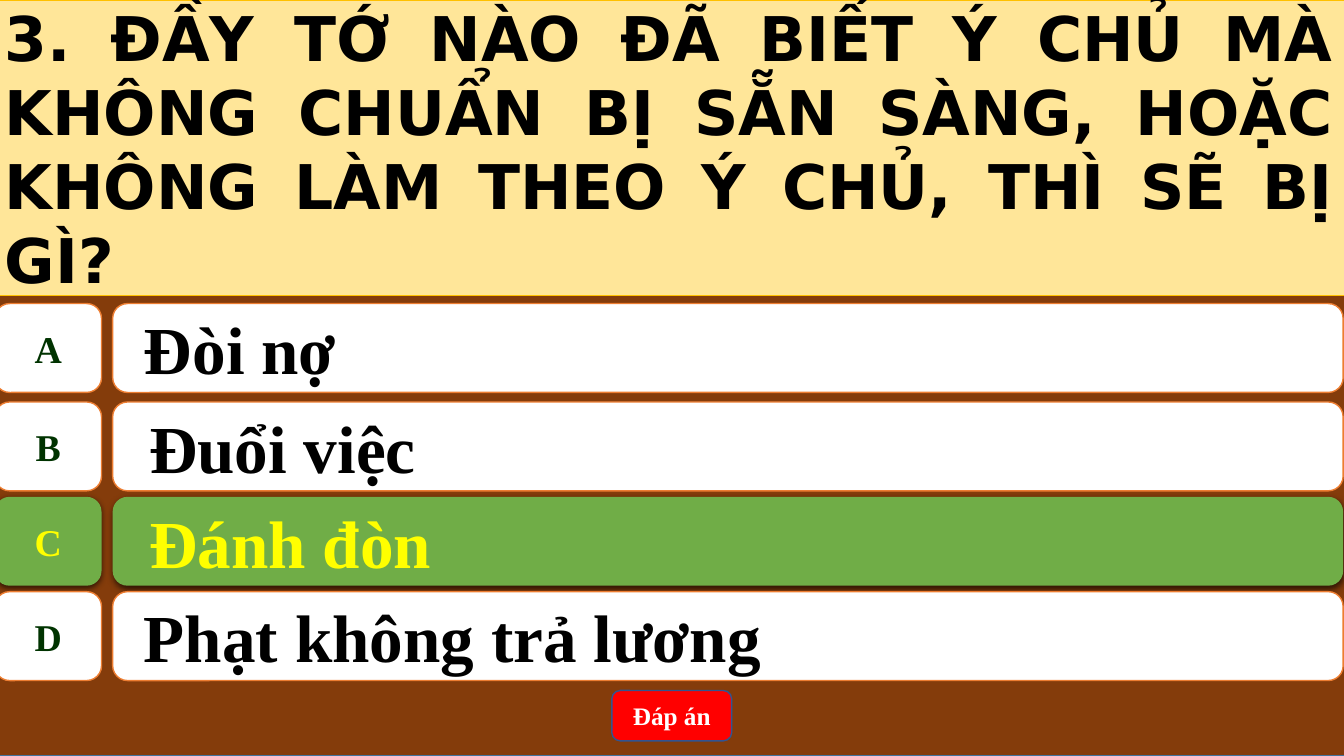
"""Build a quiz slide with one question, four answers and the right one marked."""
from dataclasses import dataclass

from lxml import etree
from pptx import Presentation
from pptx.dml.color import RGBColor
from pptx.enum import shapes, text
from pptx.oxml import ns
from pptx.util import Cm, Pt

QUESTION = ("3. ĐẦY TỚ NÀO ĐÃ BIẾT Ý CHỦ MÀ KHÔNG CHUẨN BỊ SẴN SÀNG, "
            "HOẶC KHÔNG LÀM THEO Ý CHỦ, THÌ SẼ BỊ GÌ?")
ANSWERS = [
    {"letter": "A", "answer": "Đòi nợ", "top": 7.65, "indent": 0.68},
    {"letter": "B", "answer": "Đuổi việc", "top": 10.13, "indent": 0.81},
    {"letter": "C", "answer": "Đánh đòn", "top": 12.52, "indent": 0.81},
    {"letter": "D", "answer": "Phạt không trả lương", "top": 14.91, "indent": 0.68},
]
RIGHT_LETTER = "C"
REVEAL = "Đáp án"


@dataclass(frozen=True)
class Theme:
    """Colours, fonts and type sizes of the slide."""
    board: str = "843C0B"
    board_edge: str = "43739E"
    question_fill: str = "FFE699"
    question_edge: str = "FFC000"
    row_fill: str = "FFFFFF"
    row_edge: str = "ED7D31"
    right_fill: str = "70AD47"
    right_ink: str = "FFFF00"
    letter_ink: str = "003300"
    ink: str = "000000"
    button: str = "FF0000"
    button_edge: str = "325491"
    button_ink: str = "FFFFFF"
    question_font: str = "DejaVu Sans"
    font: str = "Times New Roman"
    question_size: int = 44
    answer_size: int = 48
    letter_size: int = 27
    button_size: int = 18


THEME = Theme()
LEFT, FULL_WIDTH, SLIDE_HEIGHT, QUESTION_HEIGHT = -0.13, 34.01, 19.05, 7.44
ROW_HEIGHT, LETTER_WIDTH, ANSWER_LEFT, ANSWER_WIDTH = 2.24, 2.69, 2.84, 31.01
BUTTON_BOX = (15.42, 17.4, 3.02, 1.27)


def paint(panel, fill, edge=None, width=1):
    """Set the fill and the outline."""
    panel.fill.solid()
    panel.fill.fore_color.rgb = RGBColor.from_string(fill)
    if edge:
        panel.line.color.rgb = RGBColor.from_string(edge)
        panel.line.width = Pt(width)
    else:
        panel.line.fill.background()


def write(panel, words, *, size, color, font=THEME.font,
          align=text.PP_ALIGN.CENTER, wrap=True, indent=0.25):
    """Put one formatted bold paragraph into a panel."""
    frame = panel.text_frame
    frame.auto_size = text.MSO_AUTO_SIZE.NONE
    frame.word_wrap = wrap
    frame.vertical_anchor = text.MSO_ANCHOR.MIDDLE
    frame.margin_left = Cm(indent)
    paragraph = frame.paragraphs[0]
    paragraph.alignment = align
    paragraph.line_spacing = 1.0
    run = paragraph.add_run()
    run.text = words
    run.font.name, run.font.size, run.font.bold = font, Pt(size), True
    run.font.color.rgb = RGBColor.from_string(color)


def add_panel(slide, kind, box, fill, edge=None):
    """Add a painted preset shape without a shadow."""
    panel = slide.shapes.add_shape(kind, *map(Cm, box))
    panel.shadow.inherit = False
    paint(panel, fill, edge)
    return panel


def cast_shadow(panel):
    """Give a panel a soft shadow straight below it."""
    effects = panel._element.spPr.find(ns.qn("a:effectLst"))
    shadow = etree.SubElement(effects, ns.qn("a:outerShdw"), blurRad=str(Pt(4.5)),
                              dist=str(Pt(1.5)), dir="5400000", rotWithShape="0")
    color = etree.SubElement(shadow, ns.qn("a:srgbClr"), val="000000")
    etree.SubElement(color, ns.qn("a:alpha"), val="63000")


def add_answer(slide, letter, answer, top, indent):
    """Add one row: the letter and its answer."""
    right = letter == RIGHT_LETTER
    fill, edge = (THEME.right_fill, None) if right else (THEME.row_fill, THEME.row_edge)
    kind = shapes.MSO_SHAPE
    bar = add_panel(slide, kind.ROUNDED_RECTANGLE,
                    (ANSWER_LEFT, top, ANSWER_WIDTH, ROW_HEIGHT), fill, edge)
    write(bar, answer, size=THEME.answer_size, align=text.PP_ALIGN.LEFT, indent=indent,
          color=THEME.right_ink if right else THEME.ink)
    badge = add_panel(slide, kind.FLOWCHART_ALTERNATE_PROCESS,
                      (LEFT, top, LETTER_WIDTH, ROW_HEIGHT), fill, edge)
    write(badge, letter, size=THEME.letter_size, wrap=False,
          color=THEME.right_ink if right else THEME.letter_ink)
    if right:
        cast_shadow(bar)
        cast_shadow(badge)


def main():
    """Build and save the slide."""
    deck = Presentation()
    deck.slide_width, deck.slide_height = Cm(33.87), Cm(SLIDE_HEIGHT)
    slide = deck.slides.add_slide(deck.slide_layouts[5])
    add_panel(slide, shapes.MSO_SHAPE.RECTANGLE, (LEFT, 0, FULL_WIDTH, SLIDE_HEIGHT),
              THEME.board, THEME.board_edge)

    question = slide.shapes.title
    slide.shapes._spTree.append(question._element)
    question.left, question.top = Cm(LEFT), Cm(0)
    question.width, question.height = Cm(FULL_WIDTH), Cm(QUESTION_HEIGHT)
    paint(question, THEME.question_fill, THEME.question_edge, 0.5)
    write(question, QUESTION, size=THEME.question_size, color=THEME.ink,
          font=THEME.question_font, align=text.PP_ALIGN.JUSTIFY)

    for row in ANSWERS:
        add_answer(slide, **row)

    button = add_panel(slide, shapes.MSO_SHAPE.ROUNDED_RECTANGLE, BUTTON_BOX,
                       THEME.button, THEME.button_edge)
    write(button, REVEAL, size=THEME.button_size, color=THEME.button_ink)
    deck.save("out.pptx")


if __name__ == "__main__":
    main()
